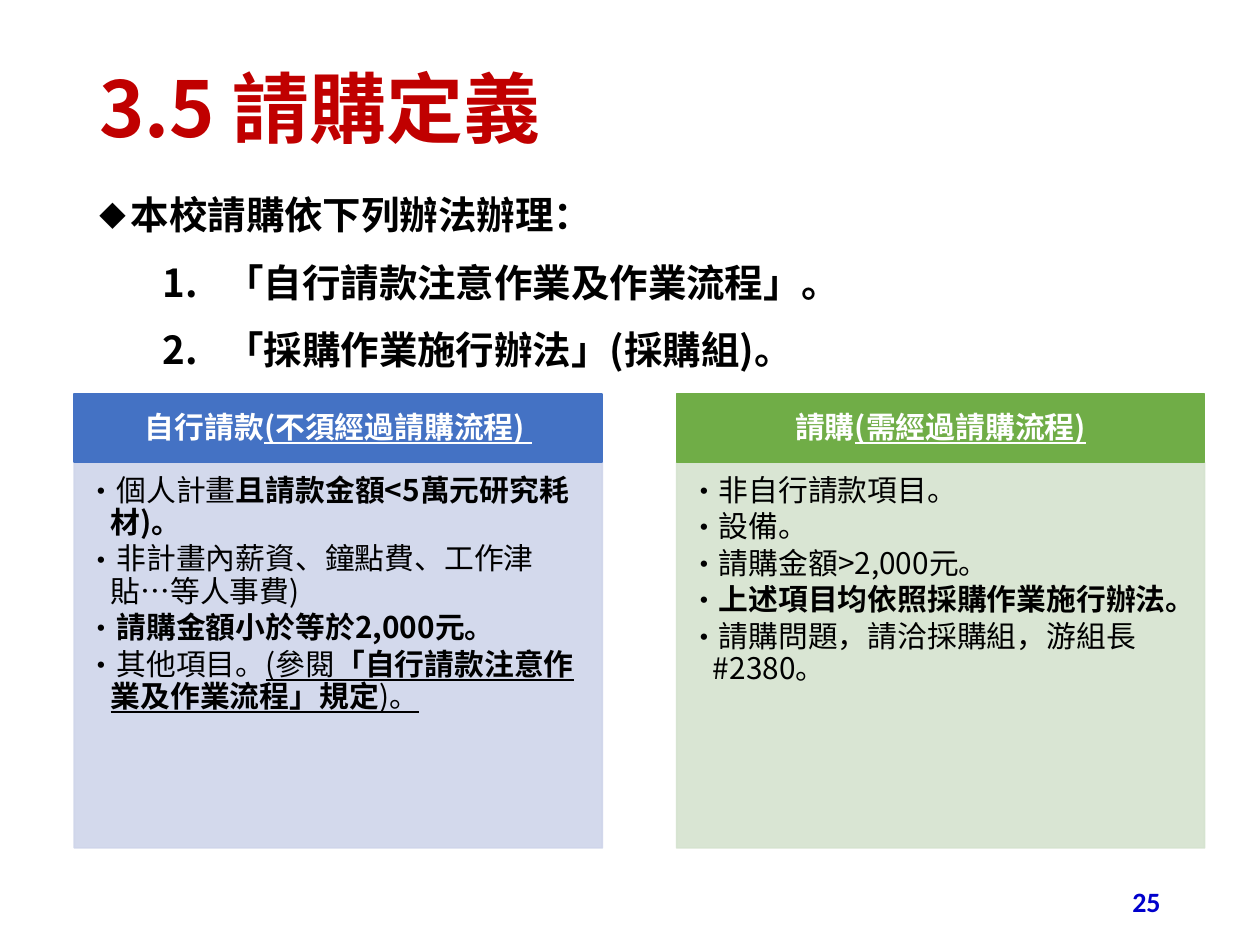
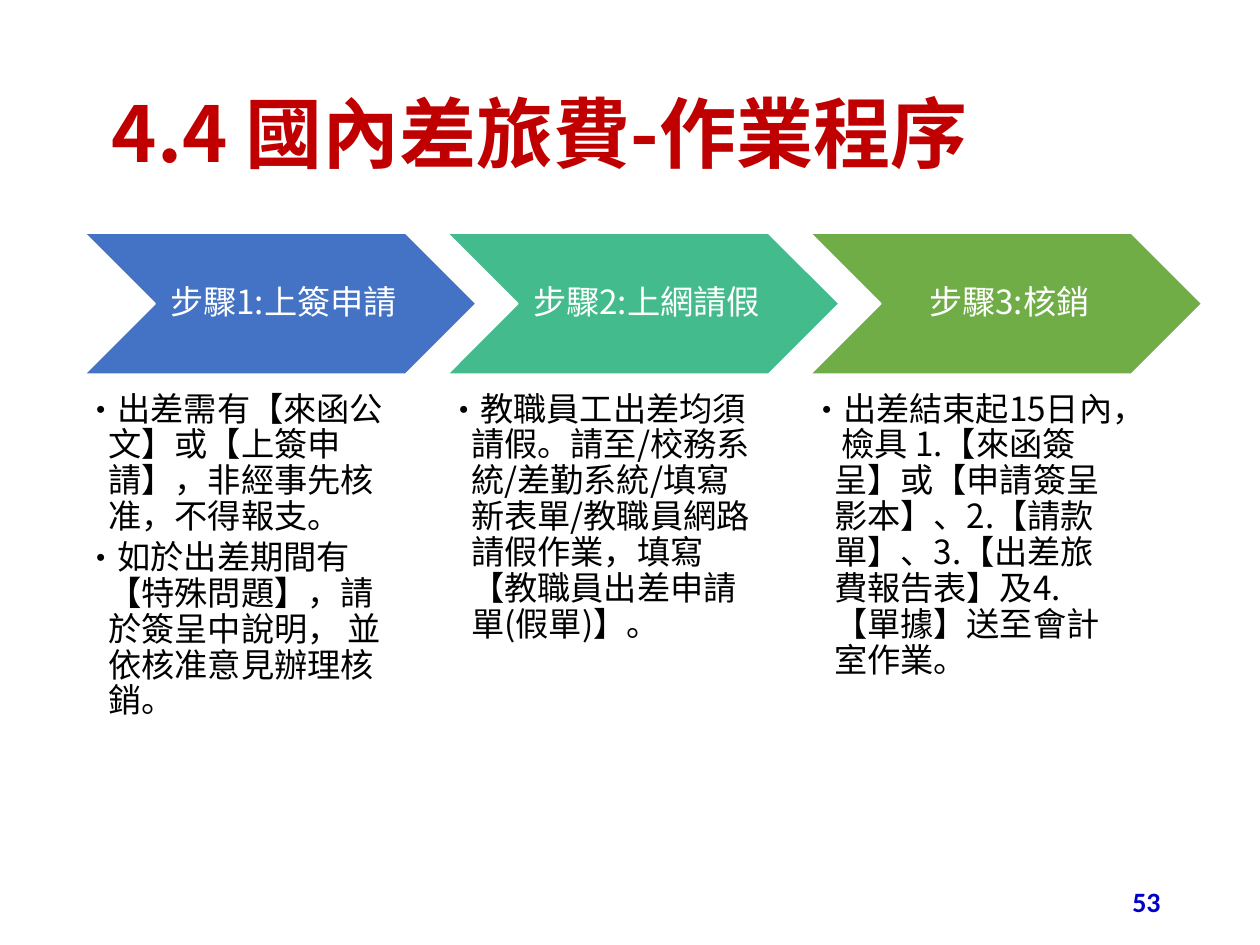
import pptx
import pptx.util
import pptx.dml.color
import pptx.enum.shapes
import pptx.enum.text
import pptx.oxml.ns
import lxml.etree

SCALE = 9144
FACE = "Noto Sans CJK SC"
RED, BLUE, GREEN, TEAL = "C00000", "4472C4", "70AD47", "43BB8D"
WHITE, BLACK, NAVY = "FFFFFF", "000000", "0000CC"
FORM = pptx.enum.shapes.MSO_SHAPE
ALIGN = pptx.enum.text.PP_ALIGN
TIGHT = 1.08

RULES = [
    "本校請購依下列辦法辦理：",
    "「自行請款注意作業及作業流程」。",
    "「採購作業施行辦法」(採購組)。",
]
PANELS = [
    (BLUE, "CFD5EA", [("自行請款", "b"), ("(不須經過請購流程) ", "bu")], [
        [("個人計畫", ""), ("且請款金額<5萬元研究耗材)。", "b")],
        [("非計畫內薪資、鐘點費、工作津貼…等人事費)", "")],
        [("請購金額小於等於2,000元。", "b")],
        [("其他項目。", ""), ("(參閱", "u"),
         ("「自行請款注意作業及作業流程」規定", "bu"), (")。", "u")],
    ]),
    (GREEN, "D5E3CF", [("請購", "b"), ("(需經過請購流程)", "bu")], [
        [("非自行請款項目。", "")],
        [("設備。", "")],
        [("請購金額>2,000元。", "")],
        [("上述項目均依照採購作業施行辦法。", "b")],
        [("請購問題，請洽採購組，游組長#2380。", "")],
    ]),
]
STEPS = [
    (BLUE, "步驟1:上簽申請", [
        [("出差需有【來函公文】或【上簽申請】，非經事先核准，不得報支。", "")],
        [("如於出差期間有", ""), ("【", "b"), ("特殊問題", ""), ("】", "b"),
         ("，請於簽呈中說明， 並依核准意見辦理核銷。", "")],
    ]),
    (TEAL, "步驟2:上網請假", [
        [("教職員工出差均須請假。請至/校務系統/差勤系統/填寫新表單/"
          "教職員網路請假作業，填寫【教職員出差申請單(假單)】。", "")],
    ]),
    (GREEN, "步驟3:核銷", [
        [("出差結束起15日內， 檢具 1.【來函簽呈】或【申請簽呈影本】、"
          "2.【請款單】、3.【出差旅費報告表】及4.【單據】送至會計室作業。", "")],
    ]),
]


def px(num):
    """Turn px into EMU."""
    return pptx.util.Emu(num * SCALE)


def tone(text):
    """Turn a hex string into a colour."""
    return pptx.dml.color.RGBColor.from_string(text)


def child(node, tag, **attrs):
    """Add a drawing element to a node."""
    name = pptx.oxml.ns.qn("a:" + tag)
    return lxml.etree.SubElement(node, name, attrs)


def fade(fill, share):
    """Set the opacity of a solid fill in percent."""
    for node in fill._xPr.iter(pptx.oxml.ns.qn("a:srgbClr")):
        if node.find(pptx.oxml.ns.qn("a:alpha")) is None:
            child(node, "alpha", val=str(share * 1000))


def block(slide, form, box, fill, edge, share=100):
    """Draw a filled preset shape."""
    shape = slide.shapes.add_shape(form, *map(px, box))
    shape.shadow.inherit = False
    shape.fill.solid()
    shape.fill.fore_color.rgb = tone(fill)
    shape.line.color.rgb = tone(edge)
    shape.line.width = pptx.util.Pt(1)
    if share < 100:
        fade(shape.fill, share)
    return shape


def label(slide, box):
    """Add an empty text box."""
    return slide.shapes.add_textbox(*map(px, box))


def frame(shape, pads=(10, 5, 10, 5), mid=False):
    """Prepare the text frame of a shape."""
    text = shape.text_frame
    text.word_wrap = True
    text.margin_left, text.margin_top, text.margin_right, text.margin_bottom = map(px, pads)
    anchor = pptx.enum.text.MSO_ANCHOR
    text.vertical_anchor = anchor.MIDDLE if mid else anchor.TOP
    return text


def mark(para, left, hang, tag, **attrs):
    """Give a paragraph a hanging bullet."""
    props = para._p.get_or_add_pPr()
    props.set("marL", str(px(left)))
    props.set("indent", str(px(-hang)))
    if tag == "buChar" and attrs["char"] == "◆":
        child(props, "buSzPct", val="70000")
    child(props, "buFont", typeface=FACE)
    child(props, tag, **attrs)


def write(para, runs, size, ink, align=ALIGN.LEFT, lead=TIGHT, face=FACE):
    """Fill a paragraph with styled runs."""
    para.alignment = align
    para.line_spacing = pptx.util.Pt(round(size * lead, 1))
    for words, style in runs:
        run = para.add_run()
        run.text = words
        font = run.font
        font.size = pptx.util.Pt(size)
        font.bold = "b" in style
        font.underline = "u" in style
        font.color.rgb = tone(ink)
        font.name = face
        latin = run._r.rPr.find(pptx.oxml.ns.qn("a:latin"))
        east = child(run._r.rPr, "ea", typeface=face)
        latin.addnext(east)


def rows(text, count):
    """Give the wanted number of paragraphs of a frame."""
    return [text.paragraphs[0]] + [text.add_paragraph() for _ in range(count - 1)]


def points(text, items, size):
    """Fill a frame with a bulleted list."""
    for para, runs in zip(rows(text, len(items)), items):
        mark(para, 19, 19, "buChar", char="•")
        write(para, runs, size, BLACK)
        para.space_after = pptx.util.Pt(round(size * 0.15, 1))


def page(deck, title, box, num):
    """Add a slide with its title and page number."""
    slide = deck.slides.add_slide(deck.slide_layouts[6])
    head = frame(label(slide, box), mid=True)
    write(head.paragraphs[0], [(title, "b")], 44, RED)
    foot = frame(label(slide, (706, 695, 225, 40)), mid=True)
    write(foot.paragraphs[0], [(num, "b")], 16, NAVY, ALIGN.RIGHT, 1.2, "Calibri")
    return slide


def rules(slide, box):
    """Place the lead line and its numbered rules."""
    text = frame(label(slide, box))
    for spot, (para, words) in enumerate(zip(rows(text, len(RULES)), RULES)):
        if spot:
            mark(para, 100, 50, "buAutoNum", type="arabicPeriod")
            para.space_before = pptx.util.Pt(6)
        else:
            mark(para, 25, 25, "buChar", char="◆")
        write(para, [(words, "b")], 22, BLACK, lead=1.2)
        para.space_after = pptx.util.Pt(6)


def panel(slide, box, dark, pale, head, items):
    """Place a headed panel with its list."""
    left, top, wide, high = box
    bar = 54
    base = block(slide, FORM.RECTANGLE, (left, top + bar, wide, high - bar), pale, pale, 90)
    points(frame(base, (10, 10, 13, 15)), items, 17)
    cap = block(slide, FORM.RECTANGLE, (left, top, wide, bar), dark, dark)
    write(frame(cap, (13, 8, 13, 8), True).paragraphs[0], head, 17, WHITE, ALIGN.CENTER)


def step(slide, box, fill, head, items):
    """Place a chevron with its list below."""
    left, top, wide, high = box
    arrow = block(slide, FORM.CHEVRON, (left, top, wide, 112), fill, WHITE)
    text = frame(arrow, (8, 3, 3, 3), True)
    write(text.paragraphs[0], [(head, "")], 19, WHITE, ALIGN.CENTER)
    note = label(slide, (left, top + 126, wide - 62, high - 126))
    points(frame(note, (0, 0, 0, 0)), items, 19)


def main():
    """Build the deck."""
    deck = pptx.Presentation()
    deck.slide_width, deck.slide_height = px(1000), px(750)
    slide = page(deck, "3.5 請購定義", (69, 43, 862, 91), "25")
    rules(slide, (69, 147, 862, 535))
    for spot, parts in enumerate(PANELS):
        panel(slide, (59 + 478 * spot, 313, 419, 360), *parts)
    slide = page(deck, "4.4 國內差旅費-作業程序", (79, 36, 862, 145), "53")
    for spot, parts in enumerate(STEPS):
        step(slide, (67 + 288 * spot, 185, 311, 463), *parts)
    deck.save("out.pptx")


if __name__ == "__main__":
    main()
